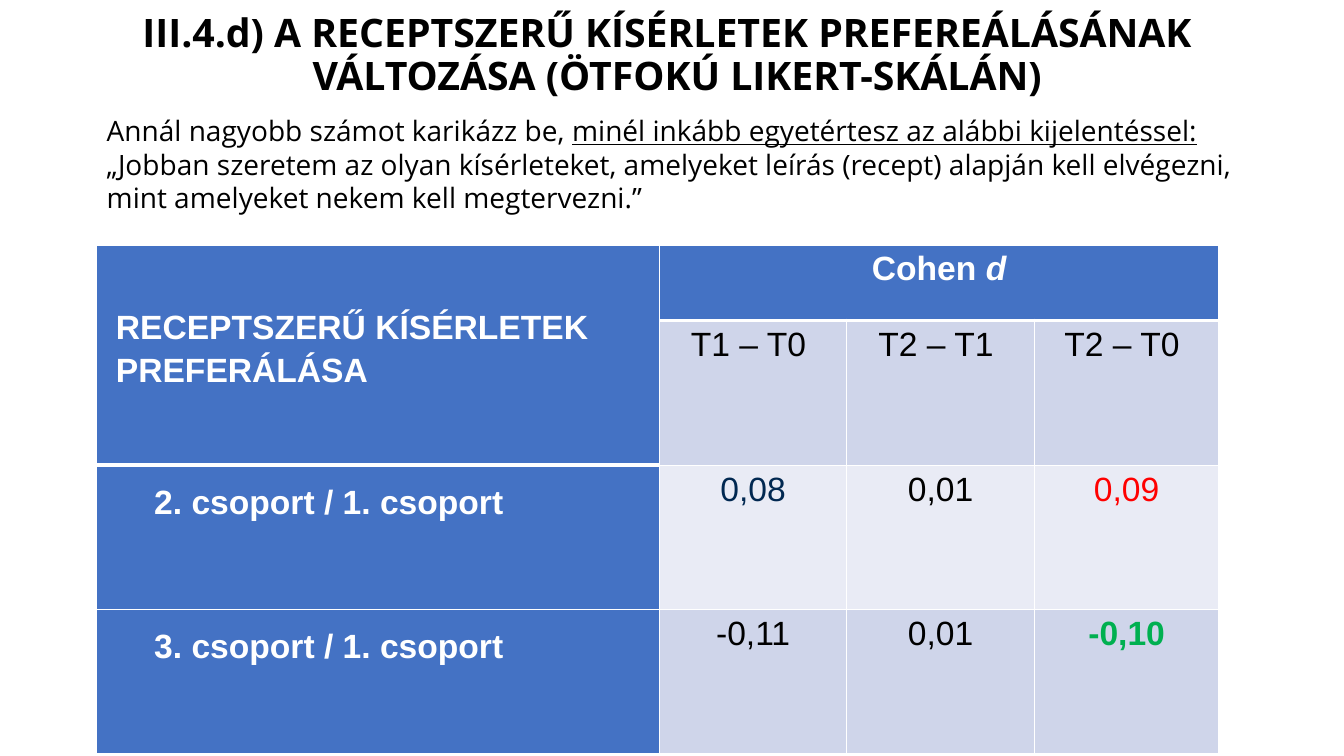
from lxml import etree
from pptx import Presentation
from pptx.dml.color import RGBColor
from pptx.enum import text as t
from pptx.oxml import ns
from pptx.util import Inches, Pt

BLUE, WHITE, BLACK = "4472C4", "FFFFFF", "000000"
BANDS = [BLUE, "CFD5EA", "E9EBF5", "CFD5EA"]


def style(span, font, size, color, bold=False):
    span.font.name = font
    span.font.size = Pt(size)
    span.font.bold = bold
    span.font.color.rgb = RGBColor.from_string(color)


def add_border(cell, side, points):
    """Draw a white line on one side (L, R, T or B) of a table cell."""
    props = cell._tc.get_or_add_tcPr()
    line = etree.SubElement(props, ns.qn("a:ln" + side), w=str(Pt(points)))
    fill = etree.SubElement(line, ns.qn("a:solidFill"))
    etree.SubElement(fill, ns.qn("a:srgbClr"), val=WHITE)


deck = Presentation()
deck.slide_width, deck.slide_height = Inches(13.33), Inches(7.5)
page = deck.slides.add_slide(deck.slide_layouts[5])

# Title
title = page.shapes.title
title.left, title.top = Inches(1.1), Inches(-0.05)
title.width, title.height = Inches(11.13), Inches(1.22)
frame = title.text_frame
frame.text = "III.4.d) A RECEPTSZERŰ KÍSÉRLETEK PREFEREÁLÁSÁNAK \v VÁLTOZÁSA (ÖTFOKÚ LIKERT-SKÁLÁN)"
frame.auto_size = t.MSO_AUTO_SIZE.NONE
frame.vertical_anchor = t.MSO_ANCHOR.MIDDLE
para = frame.paragraphs[0]
para.alignment = t.PP_ALIGN.CENTER
para.line_spacing = 0.9
for span in para.runs:
    style(span, "Open Sans", 28, BLACK, bold=True)

# Effect size table
rows = [
    ["RECEPTSZERŰ KÍSÉRLETEK PREFERÁLÁSA", "Cohen ", "", ""],
    ["", "T1 – T0 ", "T2 – T1 ", "T2 – T0 "],
    ["2. csoport / 1. csoport", "0,08", "0,01", "0,09"],
    ["3. csoport / 1. csoport", "-0,11", "0,01", "-0,10"],
]
value_colors = {(2, 1): "012851", (2, 3): "FF0000", (3, 3): "00B050"}
thick_below = {(0, 0), (0, 1), (0, 2), (0, 3), (1, 0)}

table = page.shapes.add_table(
    4, 4, Inches(0.96), Inches(2.43), Inches(11.13), Inches(5.04)).table
for column, width in zip(table.columns, [5.58, 1.86, 1.86, 1.83]):
    column.width = Inches(width)
for row, height in zip(table.rows, [0.75, 1.43, 1.43, 1.43]):
    row.height = Inches(height)
table.cell(0, 0).merge(table.cell(1, 0))
table.cell(0, 1).merge(table.cell(0, 3))

for r, row in enumerate(rows):
    for c, wording in enumerate(row):
        cell = table.cell(r, c)
        heading = r == 0 or c == 0
        add_border(cell, "L", 1)
        add_border(cell, "R", 1)
        add_border(cell, "T", 3 if (r - 1, c) in thick_below else 1)
        add_border(cell, "B", 3 if (r, c) in thick_below else 1)
        cell.fill.solid()
        cell.fill.fore_color.rgb = RGBColor.from_string(BLUE if heading else BANDS[r])
        cell.margin_left = cell.margin_right = Inches(0.19 if r < 2 else 0.07)
        cell.margin_top = cell.margin_bottom = 0
        if not wording:
            continue
        para = cell.text_frame.paragraphs[0]
        para.text = wording
        if c == 0 and r > 1:
            para.line_spacing = 1.5
            para._p.get_or_add_pPr().set("marL", str(Inches(0.5)))
        else:
            para.line_spacing = 1.15
            para.space_after = Pt(10)
        para.alignment = t.PP_ALIGN.CENTER if c else t.PP_ALIGN.LEFT
        color = WHITE if heading else value_colors.get((r, c), BLACK)
        style(para.runs[0], "Arial", 24, color, bold=heading or (r, c) == (3, 3))

table.cell(0, 0).margin_top = Inches(0.58)
symbol = table.cell(0, 1).text_frame.paragraphs[0].add_run()
symbol.text = "d"
style(symbol, "Arial", 24, WHITE, bold=True)
symbol.font.italic = True

# Question put to the pupils
box = page.shapes.add_textbox(Inches(0.96), Inches(1.07), Inches(11.41), Inches(1.11))
frame = box.text_frame
frame.word_wrap = True
frame.auto_size = t.MSO_AUTO_SIZE.SHAPE_TO_FIT_TEXT
frame.vertical_anchor = t.MSO_ANCHOR.MIDDLE
frame.text = (
    "Annál nagyobb számot karikázz be, \n"
    "„Jobban szeretem az olyan kísérleteket, amelyeket leírás (recept) alapján "
    "kell elvégezni, mint amelyeket nekem kell megtervezni.”")
stressed = frame.paragraphs[0].add_run()
stressed.text = "minél inkább egyetértesz az alábbi kijelentéssel:"
stressed.font.underline = True
for para in frame.paragraphs:
    for span in para.runs:
        style(span, "Open Sans", 20, BLACK)

deck.save("out.pptx")
